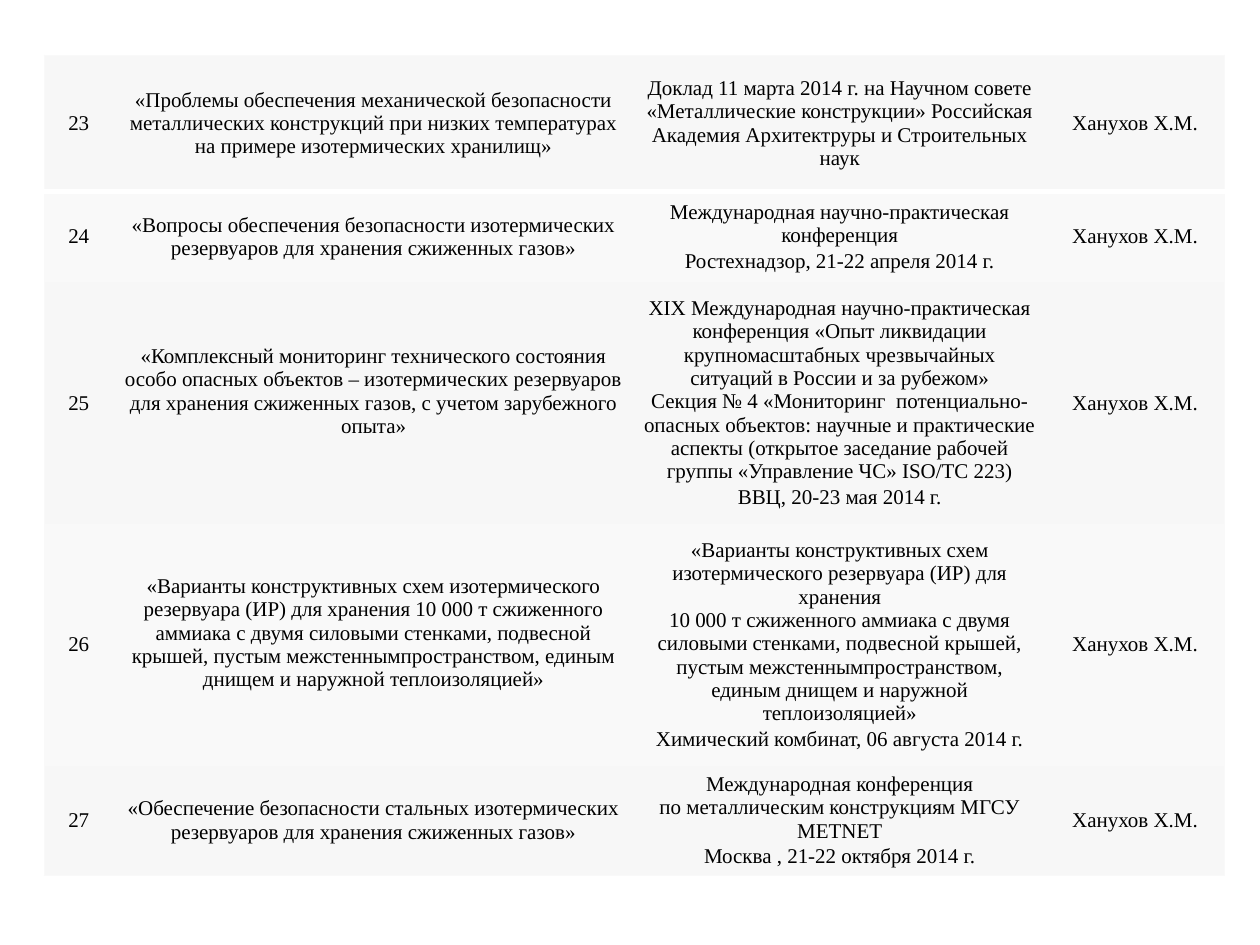
import pptx
import pptx.dml.color
import pptx.enum.text
import pptx.oxml
import pptx.oxml.ns
import pptx.util
from pptx.util import Pt

COLORS = {
    "text": "000000",
    "odd_row": "F7F7F7",
    "even_row": "F9F9F9",
    "frame": "F9F9F9",
    "divider": "FFFFFF",
}
FONT = {"name": "Times New Roman", "size": Pt(12)}
CELL = {
    "margin_left": Pt(5),
    "margin_right": Pt(5),
    "margin_top": Pt(0),
    "margin_bottom": Pt(0),
    "vertical_anchor": pptx.enum.text.MSO_ANCHOR.MIDDLE,
}
PLAIN_TABLE_STYLE = "{2D5ABB26-0587-4C30-8999-92F81FD0307C}"
COLUMN_WIDTHS = [39.6, 297.4, 235.4, 102.2]
ROW_HEIGHTS = [77.8, 51.8, 138.2, 138.2, 62.6]
TITLE_COLUMN = 1
RAISED_TITLE_ROWS = {2, 3}
RAISED_TITLE_MARGIN = Pt(13.3)
FIRST_NUMBER = 23
AUTHOR = "Ханухов Х.М."
REPORTS = [
    (
        "«Проблемы обеспечения механической безопасности металлических конструкций "
        "при низких температурах на примере изотермических хранилищ»",
        ["Доклад 11 марта 2014 г. на Научном совете «Металлические конструкции» "
         "Российская Академия Архитектруры и Строительных наук"],
    ),
    (
        "«Вопросы обеспечения безопасности изотермических резервуаров "
        "для хранения сжиженных газов»",
        ["Международная научно-практическая конференция",
         "Ростехнадзор, 21-22 апреля 2014 г."],
    ),
    (
        "«Комплексный мониторинг технического состояния особо опасных объектов – "
        "изотермических резервуаров для хранения сжиженных газов, "
        "с учетом зарубежного опыта»",
        ["XIX Международная научно-практическая конференция «Опыт ликвидации "
         "крупномасштабных чрезвычайных ситуаций в России и за рубежом»",
         "Секция № 4 «Мониторинг  потенциально-опасных объектов: научные и "
         "практические аспекты (открытое заседание рабочей группы "
         "«Управление ЧС» ISO/TC 223)",
         "ВВЦ, 20-23 мая 2014 г."],
    ),
    (
        "«Варианты конструктивных схем изотермического резервуара (ИР) для хранения "
        "10 000 т сжиженного аммиака с двумя силовыми стенками, подвесной крышей, "
        "пустым межстеннымпространством, единым днищем и наружной теплоизоляцией»",
        ["«Варианты конструктивных схем изотермического резервуара (ИР) для хранения",
         "10 000 т сжиженного аммиака с двумя силовыми стенками, подвесной крышей, "
         "пустым межстеннымпространством, единым днищем и наружной теплоизоляцией»",
         "Химический комбинат, 06 августа 2014 г."],
    ),
    (
        "«Обеспечение безопасности стальных изотермических резервуаров "
        "для хранения сжиженных газов»",
        ["Международная конференция",
         "по металлическим конструкциям МГСУ METNET",
         "Москва , 21-22 октября 2014 г."],
    ),
]


def color(name):
    return pptx.dml.color.RGBColor.from_string(COLORS[name])


def apply_format(target, values):
    for name, value in values.items():
        setattr(target, name, value)


def add_border(cell, side, color_name, width):
    cell._tc.get_or_add_tcPr().append(pptx.oxml.parse_xml(
        f'<a:ln{side} {pptx.oxml.ns.nsdecls("a")} w="{Pt(width)}">'
        f'<a:solidFill><a:srgbClr val="{COLORS[color_name]}"/></a:solidFill>'
        f'</a:ln{side}>'
    ))


def frame_cell(cell, row, column):
    last_row = len(ROW_HEIGHTS) - 1
    if column == 0:
        add_border(cell, "L", "frame", 0.75)
    if column == len(COLUMN_WIDTHS) - 1:
        add_border(cell, "R", "frame", 0.75)
    if row == 0:
        add_border(cell, "T", "frame", 0.75)
        add_border(cell, "B", "divider", 3)
    if row == last_row:
        add_border(cell, "B", "frame", 0.75)


def write_cell(cell, lines):
    apply_format(cell, CELL)
    cell.text_frame.text = "\n".join(lines)
    for paragraph in cell.text_frame.paragraphs:
        paragraph.alignment = pptx.enum.text.PP_ALIGN.CENTER
        for run in paragraph.runs:
            apply_format(run.font, FONT)
            run.font.color.rgb = color("text")
    if len(lines) > 1:
        paragraph.line_spacing = 1.1


def add_report_table(slide):
    table = slide.shapes.add_table(
        len(ROW_HEIGHTS), len(COLUMN_WIDTHS), Pt(25.2), Pt(31.6),
        Pt(sum(COLUMN_WIDTHS)), Pt(sum(ROW_HEIGHTS)),
    ).table
    apply_format(table, {"first_row": False, "horz_banding": False})
    table._tbl.tblPr.find(pptx.oxml.ns.qn("a:tableStyleId")).text = PLAIN_TABLE_STYLE
    for column, width in zip(table.columns, COLUMN_WIDTHS):
        column.width = Pt(width)
    for row, height in zip(table.rows, ROW_HEIGHTS):
        row.height = Pt(height)

    for row, (title, event) in enumerate(REPORTS):
        contents = [[str(FIRST_NUMBER + row)], [title], event, [AUTHOR]]
        for column, lines in enumerate(contents):
            cell = table.cell(row, column)
            write_cell(cell, lines)
            frame_cell(cell, row, column)
            cell.fill.solid()
            cell.fill.fore_color.rgb = color("even_row" if row % 2 else "odd_row")
    for row in RAISED_TITLE_ROWS:
        table.cell(row, TITLE_COLUMN).margin_bottom = RAISED_TITLE_MARGIN


def main():
    presentation = pptx.Presentation()
    apply_format(presentation, {"slide_width": Pt(720), "slide_height": Pt(540)})
    slide = presentation.slides.add_slide(presentation.slide_layouts[6])
    add_report_table(slide)
    presentation.save("out.pptx")


if __name__ == "__main__":
    main()
